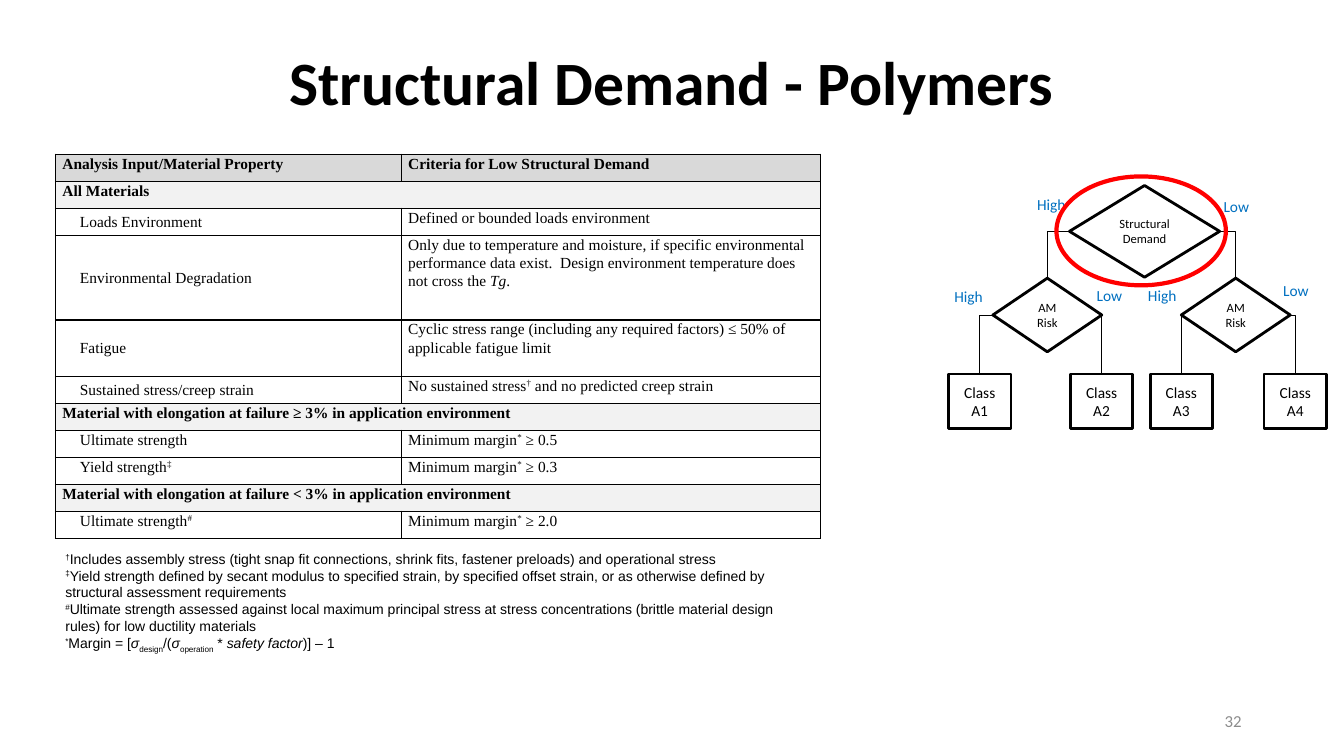
from lxml import etree
from pptx import Presentation
from pptx import util as u
from pptx.dml.color import RGBColor
from pptx.enum import shapes, text
from pptx.oxml.ns import qn

Pt = u.Pt
BLACK = RGBColor(0x00, 0x00, 0x00)
GRAY = RGBColor(0x8C, 0x8C, 0x8C)
BLUE = RGBColor(0x00, 0x70, 0xC0)
RED = RGBColor(0xFF, 0x00, 0x00)
HEADER_FILL = RGBColor(0xD9, 0xD9, 0xD9)
SECTION_FILL = RGBColor(0xF2, 0xF2, 0xF2)
LEFT, CENTER, RIGHT = text.PP_ALIGN.LEFT, text.PP_ALIGN.CENTER, text.PP_ALIGN.RIGHT
TOP, MIDDLE = text.MSO_ANCHOR.TOP, text.MSO_ANCHOR.MIDDLE
BASELINES = {"^": "30000", "_": "-30000"}


def write(frame, lines, size, name="Calibri", color=BLACK, align=LEFT, anchor=MIDDLE,
          wrap=True, bold=False, **spacing):
    """Pieces between bars: ^ raises, _ lowers, ~ makes italic."""
    frame.vertical_anchor, frame.word_wrap = anchor, wrap
    for number, line in enumerate(lines):
        para = frame.paragraphs[0] if number == 0 else frame.add_paragraph()
        para.alignment = align
        for key, value in spacing.items():
            setattr(para, key, value)
        for piece in filter(None, line.split("|")):
            mark = piece[0] if piece[0] in "^_~" else ""
            span = para.add_run()
            span.text = piece[len(mark):]
            look = {"size": Pt(size), "name": name, "bold": bold, "italic": mark == "~"}
            for key, value in look.items():
                setattr(span.font, key, value)
            span.font.color.rgb = color
            if mark in BASELINES:
                span.font._element.set("baseline", BASELINES[mark])


def outline(kind, left, top, width, height, color=BLACK, weight=2):
    shape = page.shapes.add_shape(kind, Pt(left), Pt(top), Pt(width), Pt(height))
    shape.shadow.inherit = False
    shape.fill.background()
    shape.line.color.rgb = color
    shape.line.width = Pt(weight)
    return shape


deck = Presentation()
deck.slide_width, deck.slide_height = Pt(960), Pt(540)
page = deck.slides.add_slide(deck.slide_layouts[6])

# Title, page number, footnotes and branch labels
footnotes = [
    "|^†|Includes assembly stress (tight snap fit connections, shrink fits, fastener preloads)"
    " and operational stress",
    "|^‡|Yield strength defined by secant modulus to specified strain, by specified offset strain,"
    " or as otherwise defined by structural assessment requirements",
    "|^#|Ultimate strength assessed against local maximum principal stress at stress"
    " concentrations (brittle material design rules) for low ductility materials",
    "|^*|Margin = [|~σ|_design|/(|~σ|_operation| * |~safety factor|)] – 1",
]
label = {"size": 11, "color": BLUE, "anchor": TOP, "wrap": False}
texts = [
    ((66, 8.6, 828, 104.4), ["Structural Demand - Polymers"],
     {"size": 44, "bold": True, "align": CENTER, "line_spacing": 0.9}),
    ((678, 500.4, 216, 28.8), ["32"], {"size": 12, "color": GRAY, "align": RIGHT}),
    ((39.6, 390.2, 546.5, 80), footnotes, {"size": 10, "name": "Arial"}),
    ((733.7, 136.1, 35.3, 20.9), ["High"], label),
    ((674.6, 201.6, 35.3, 20.9), ["High"], label),
    ((812.9, 200.9, 35.3, 20.9), ["High"], label),
    ((866.9, 137.5, 33.1, 20.9), ["Low"], label),
    ((776.2, 200.9, 33.1, 20.9), ["Low"], label),
    ((909.4, 197.3, 33.1, 20.9), ["Low"], label),
]
for place, lines, style in texts:
    box = page.shapes.add_textbox(*map(Pt, place))
    write(box.text_frame, lines, **style)

# Decision tree
nodes = {}
for key, words, place in [
    ("demand", "Structural Demand", (763.9, 132.5, 107.3, 65.5)),
    ("risk high", "AM Risk", (709.2, 198.7, 77.8, 52.6)),
    ("risk low", "AM Risk", (843.8, 198.7, 77.8, 52.6)),
]:
    nodes[key] = outline(shapes.MSO_SHAPE.FLOWCHART_DECISION, *place)
    write(nodes[key].text_frame, [words], 9, align=CENTER)
for key, left in [("A1", 677.5), ("A2", 764.6), ("A3", 821.5), ("A4", 902.9)]:
    nodes[key] = outline(shapes.MSO_SHAPE.FLOWCHART_PROCESS, left, 267.1, 44.6, 38.9)
    write(nodes[key].text_frame, ["Class", key], 11, align=CENTER)

# Branches run from a diamond's side to the top of the next node
for parent, side, child in [
    ("demand", 1, "risk high"), ("demand", 3, "risk low"), ("risk high", 1, "A1"),
    ("risk high", 3, "A2"), ("risk low", 1, "A3"), ("risk low", 3, "A4"),
]:
    start, end = nodes[parent], nodes[child]
    straight = child == "A3"
    kind = shapes.MSO_CONNECTOR.STRAIGHT if straight else shapes.MSO_CONNECTOR.ELBOW
    branch = page.shapes.add_connector(
        kind, start.left + (start.width if side == 3 else 0), start.top + start.height // 2,
        end.left + end.width // 2, end.top)
    if straight:
        branch.begin_connect(start, side)
        branch.end_connect(end, 0)
    else:
        branch._element.spPr.find(qn("a:prstGeom")).set("prst", "bentConnector2")
    branch.line.color.rgb = BLACK
    branch.line.width = Pt(0.5)
    etree.SubElement(branch._element.spPr, qn("a:effectLst"))

# Highlight around the first decision
outline(shapes.MSO_SHAPE.OVAL, 754.6, 126, 121, 77.8, RED, 3)

# Criteria table: a row with one entry is a section heading
rows = [
    ("Analysis Input/Material Property", "Criteria for Low Structural Demand"),
    ("All Materials",),
    ("Loads Environment", "Defined or bounded loads environment"),
    ("Environmental Degradation",
     "Only due to temperature and moisture, if specific environmental performance data exist.  "
     "Design environment temperature does not cross the |~Tg|."),
    ("Fatigue",
     "Cyclic stress range (including any required factors) ≤ 50% of applicable fatigue limit"),
    ("Sustained stress/creep strain", "No sustained stress|^†| and no predicted creep strain"),
    ("Material with elongation at failure ≥ 3% in application environment",),
    ("Ultimate strength", "Minimum margin|^*| ≥ 0.5"),
    ("Yield strength|^‡", "Minimum margin|^*| ≥ 0.3"),
    ("Material with elongation at failure < 3% in application environment",),
    ("Ultimate strength|^#", "Minimum margin|^*| ≥ 2.0"),
]
heights = {3: 60.5, 4: 40.3}
table = page.shapes.add_table(len(rows), 2, Pt(39.6), Pt(110.2), Pt(546.5), Pt(275)).table
table.first_row = table.horz_banding = False
table.columns[0].width, table.columns[1].width = Pt(247), Pt(299.5)
margins = {"margin_left": Pt(5), "margin_right": Pt(5), "margin_top": 0, "margin_bottom": 0}

for row, entries in enumerate(rows):
    table.rows[row].height = Pt(heights.get(row, 19.3))
    section = len(entries) == 1
    heading = row == 0 or section
    if section:
        table.cell(row, 0).merge(table.cell(row, 1))
    for column in range(2):
        cell = table.cell(row, column)
        for key, value in margins.items():
            setattr(cell, key, value)
        if heading:
            cell.fill.solid()
            cell.fill.fore_color.rgb = SECTION_FILL if section else HEADER_FILL
        else:
            cell.fill.background()
        properties = cell._tc.get_or_add_tcPr()
        for place, edge in enumerate(("a:lnL", "a:lnR", "a:lnT", "a:lnB")):
            border = etree.Element(qn(edge), w=str(Pt(1)))
            paint = etree.SubElement(border, qn("a:solidFill"))
            etree.SubElement(paint, qn("a:srgbClr"), val=str(BLACK))
            properties.insert(place, border)
        if column < len(entries):
            centered = column == 0 and 2 <= row <= 5
            write(cell.text_frame, [entries[column]], 11, "Times New Roman", bold=heading,
                  line_spacing=1.07, space_after=Pt(2 if heading else 0))
            cell.vertical_anchor = MIDDLE if centered else TOP
            if column == 0 and not heading:
                indent = cell.text_frame.paragraphs[0]._p.get_or_add_pPr()
                indent.set("marL", str(Pt(12.5)))

deck.save("out.pptx")
